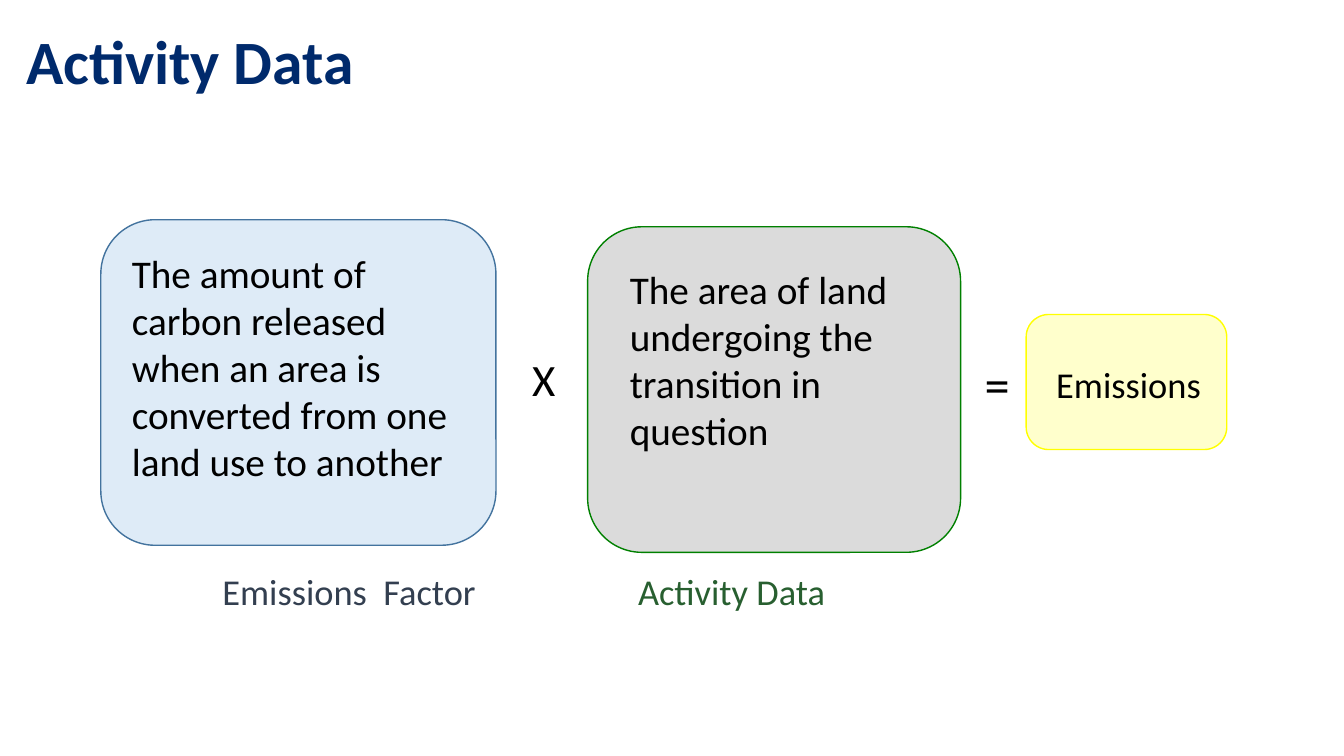
from pptx import Presentation
from pptx.dml.color import RGBColor
from pptx.enum.shapes import MSO_SHAPE
from pptx.enum.text import MSO_ANCHOR, PP_ALIGN
from pptx.util import Inches, Pt

ROUNDED = MSO_SHAPE.ROUNDED_RECTANGLE
LEFT, CENTER = PP_ALIGN.LEFT, PP_ALIGN.CENTER
TOP, MIDDLE = MSO_ANCHOR.TOP, MSO_ANCHOR.MIDDLE

GRID = Inches(0.1)  # side of one square grid cell
COLUMNS, ROWS = 133.33, 75
LABEL_ROW, LABEL_HEIGHT = 56, 5.4
TERM_HEIGHT = 32.3
FONT = "Calibri"
COLORS = {
    "title": "002A6C",
    "text": "000000",
    "factor_fill": "DEEBF7",
    "factor_line": "43739E",
    "factor_label": "333F50",
    "activity_fill": "DBDBDB",
    "activity_line": "008000",
    "activity_label": "285F30",
    "emissions_fill": "FFFFCC",
    "emissions_line": "FFFF00",
}


def color(name):
    return RGBColor.from_string(COLORS[name])


def cells(*counts):
    return [round(count * GRID) for count in counts]


def add_card(slide, area, name):
    """Draw a rounded card in the fill and line colours of one term."""
    card = slide.shapes.add_shape(ROUNDED, *cells(*area))
    card.shadow.inherit = False
    card.fill.solid()
    card.fill.fore_color.rgb = color(f"{name}_fill")
    card.line.color.rgb = color(f"{name}_line")
    card.line.width = Pt(1)


def add_text(slide, area, wording, size, ink="text", align=LEFT,
             anchor=TOP, bold=False):
    box = slide.shapes.add_textbox(*cells(*area))
    frame = box.text_frame
    frame.word_wrap = True
    frame.vertical_anchor = anchor
    paragraph = frame.paragraphs[0]
    paragraph.text = wording
    paragraph.alignment = align
    font = paragraph.font
    font.name, font.size, font.bold = FONT, Pt(size), bold
    font.color.rgb = color(ink)


def add_label(slide, left, width, wording, ink):
    add_text(slide, (left, LABEL_ROW, width, LABEL_HEIGHT), wording, 26, ink, CENTER)


def main():
    deck = Presentation()
    deck.slide_width, deck.slide_height = cells(COLUMNS, ROWS)
    slide = deck.slides.add_slide(deck.slide_layouts[6])

    add_text(slide, (1.6, 0, 129.9, 11.8), "Activity Data", 44, "title",
             anchor=MIDDLE, bold=True)

    add_card(slide, (10, 21.8, 39.2, TERM_HEIGHT), "factor")
    add_text(slide, (12.1, 24.2, 34.3, 25.2),
             "The amount of carbon released when an area is converted "
             "from one land use to another", 28)
    add_label(slide, 20.1, 29.1, "Emissions  Factor", "factor_label")

    add_text(slide, (51.8, 34.4, 5.5, 6.4), "X", 32)

    add_card(slide, (58.3, 22.5, 37, TERM_HEIGHT), "activity")
    add_text(slide, (61.5, 25.8, 30.5, 19.9),
             "The area of land undergoing the transition in question", 28)
    add_label(slide, 60.8, 23.6, "Activity Data", "activity_label")

    add_text(slide, (96.7, 34.5, 5.1, 7.1), "=", 36)

    add_card(slide, (101.8, 31.2, 19.9, 13.4), "emissions")
    add_text(slide, (103.8, 35.4, 19.8, 5.4), "Emissions", 26)

    deck.save("out.pptx")


if __name__ == "__main__":
    main()
